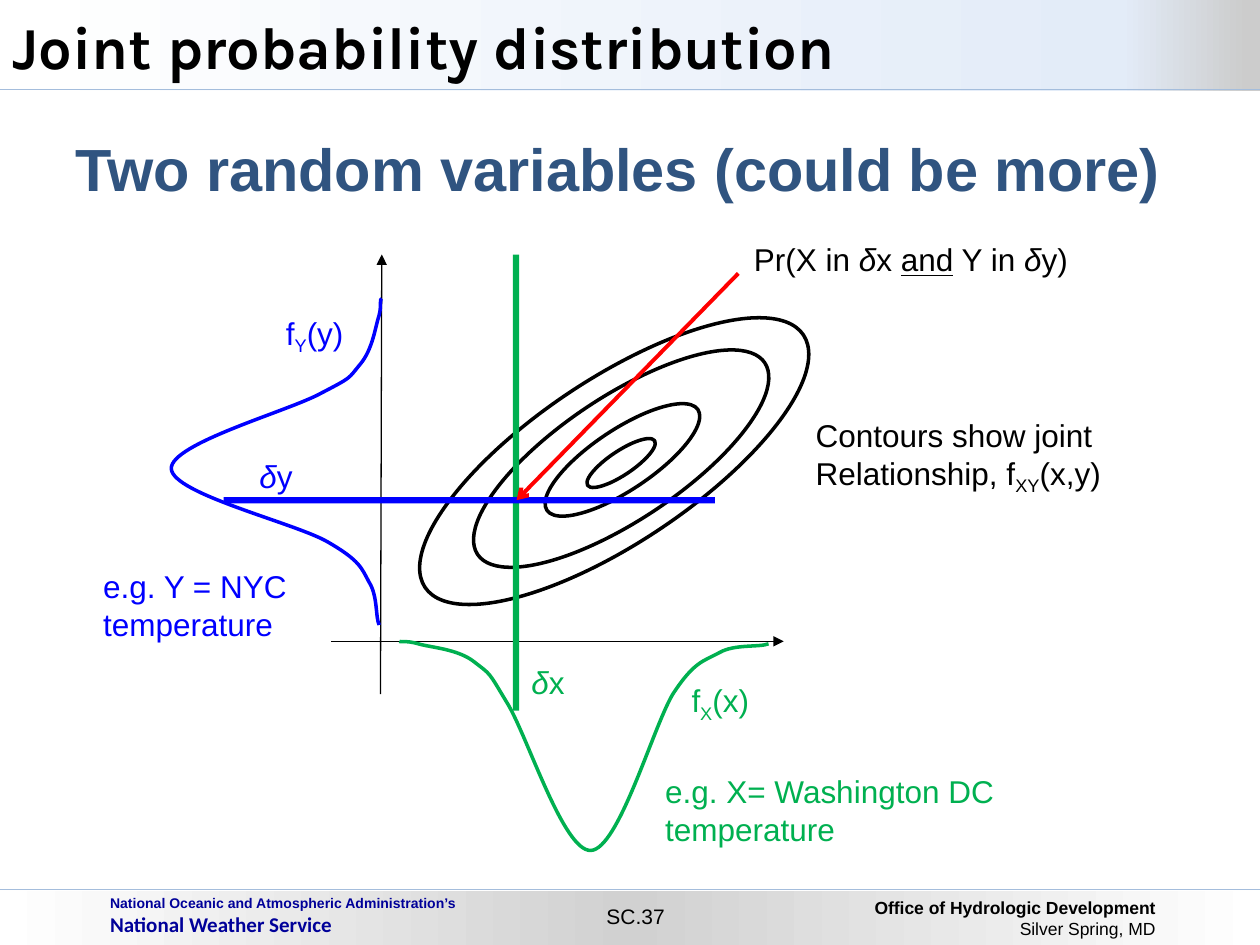
from lxml import etree
from pptx import Presentation
from pptx import util as u
from pptx.dml.color import RGBColor
from pptx.enum import shapes, text
from pptx.oxml.ns import qn

BLACK = RGBColor(0x00, 0x00, 0x00)
WHITE = RGBColor(0xFF, 0xFF, 0xFF)
RED = RGBColor(0xFF, 0x00, 0x00)
GREEN = RGBColor(0x00, 0xB0, 0x50)
BLUE = RGBColor(0x00, 0x00, 0xFF)
NAVY = RGBColor(0x00, 0x00, 0x99)
HEADING = RGBColor(0x30, 0x54, 0x80)
RULE = RGBColor(0xA4, 0xBD, 0xDC)
SILVER = RGBColor(0xD1, 0xD1, 0xD1)
ICE = RGBColor(0xE3, 0xEC, 0xF8)
GREY = RGBColor(0xCC, 0xCC, 0xCC)

# The slide is a grid of square cells; all positions are in cells
COLS, ROWS = 100, 75
CELL = u.Inches(0.1)
TILT = 326.3
RIGHT, CENTER = text.PP_ALIGN.RIGHT, text.PP_ALIGN.CENTER
RECT, OVAL = shapes.MSO_SHAPE.RECTANGLE, shapes.MSO_SHAPE.OVAL

# Run styles
ITALIC, UNDER, SUB = {"italic": True}, {"underline": True}, {"sub": True}


def cells(*values):
    return [u.Emu(round(v * CELL)) for v in values]


def add_shape(s, kind, box, fill=None, line=None, rotation=0):
    sp = s.shapes.add_shape(kind, *cells(*box))
    sp.shadow.inherit = False
    sp.rotation = rotation
    if fill is None:
        sp.fill.background()
    else:
        sp.fill.solid()
        sp.fill.fore_color.rgb = fill
    if line is None:
        sp.line.fill.background()
    else:
        sp.line.color.rgb = line
        sp.line.width = u.Pt(2)
    return sp


def add_band(s, box, stops):
    """Rectangle with a left-to-right gradient of (percent, colour) stops."""
    sp = add_shape(s, RECT, box, WHITE)
    sp.fill.gradient()
    sp.fill.gradient_angle = 0
    stop_list = sp._element.spPr.find(".//" + qn("a:gsLst"))
    for old in list(stop_list):
        stop_list.remove(old)
    for percent, color in stops:
        stop = etree.SubElement(stop_list, qn("a:gs"), pos=str(percent * 1000))
        etree.SubElement(stop, qn("a:srgbClr"), val=str(color))


def add_line(s, start, end, color=BLACK, width=0.75, head=None, tail=None):
    c = s.shapes.add_connector(shapes.MSO_CONNECTOR.STRAIGHT, *cells(*start, *end))
    c.line.color.rgb = color
    c.line.width = u.Pt(width)
    ln = c.line._get_or_add_ln()
    for tag, kind in (("a:headEnd", head), ("a:tailEnd", tail)):
        if kind:
            etree.SubElement(ln, qn(tag), type=kind)
    etree.SubElement(c._element.spPr, qn("a:effectLst"))


def add_curve(s, start, segments, color):
    """Open curve through cubic Bezier segments (x1, y1, x2, y2, x, y)."""
    builder = s.shapes.build_freeform(*cells(*start))
    builder.add_line_segments([cells(*seg[4:]) for seg in segments], close=False)
    sp = builder.convert_to_shape()
    sp.shadow.inherit = False
    sp.fill.background()
    sp.line.color.rgb = color
    sp.line.width = u.Pt(2)
    # Bend each straight segment with its control points
    straight = list(sp._element.spPr.iter(qn("a:lnTo")))
    for node, seg in zip(straight, segments):
        node.tag = qn("a:cubicBezTo")
        for old in list(node):
            node.remove(old)
        for x, y in zip(cells(*seg[::2]), cells(*seg[1::2])):
            etree.SubElement(node, qn("a:pt"), x=str(x - sp.left), y=str(y - sp.top))


def write(sp, paragraphs, size=18, color=BLACK, font="Arial", bold=False, align=None):
    """Fill with paragraphs, each a list of (text, style) runs."""
    tf = sp.text_frame
    for i, runs in enumerate(paragraphs):
        p = tf.paragraphs[0] if i == 0 else tf.add_paragraph()
        p.alignment = align or text.PP_ALIGN.LEFT
        for words, style in runs:
            r = p.add_run()
            r.text = words
            r.font.name = style.get("font", font)
            r.font.size = u.Pt(style.get("size", size))
            r.font.bold = style.get("bold", bold)
            r.font.italic = style.get("italic")
            r.font.underline = style.get("underline")
            r.font.color.rgb = color
            if style.get("sub"):
                r._r.get_or_add_rPr().set("baseline", "-25000")
    return tf


def add_text(s, box, paragraphs, wrap=False, grow=True, **look):
    sp = s.shapes.add_textbox(*cells(*box))
    tf = write(sp, paragraphs, **look)
    tf.word_wrap = wrap
    tf.auto_size = text.MSO_AUTO_SIZE.SHAPE_TO_FIT_TEXT if grow else text.MSO_AUTO_SIZE.NONE
    return tf


def add_frame(s):
    # Footer
    add_line(s, (COLS, 70.6), (0, 70.6), RULE)
    add_band(s, (0, 70.7, COLS, 4.4), [(0, WHITE), (50, SILVER), (100, WHITE)])
    tf = add_text(s, (68.9, 70.7, 23.3, 4.4),
                  [[("Office of Hydrologic Development", {"bold": True})],
                   [("Silver Spring, MD", {})]],
                  wrap=True, grow=False, size=10, align=RIGHT)
    tf.margin_left, tf.margin_right = u.Inches(0.01), u.Inches(0.05)
    add_text(s, (7.75, 70.5, 33.3, 4.3),
             [[("National Oceanic and Atmospheric Administration’s", {"size": 8})],
              [("National Weather Service", {"font": "Calibri"})]],
             wrap=True, size=12, color=NAVY, bold=True)
    add_text(s, (47, 71.2, 6.9, 3), [[("SC.37", {})]], size=12, align=CENTER)

    # Title bar
    add_band(s, (0, 0, COLS, 7.2), [(0, WHITE), (89, ICE), (99, GREY)])
    add_line(s, (COLS, 7.1), (0, 7.1), RULE)

    # Heading and title
    body = add_shape(s, RECT, (5, 10, 95, 56.7), WHITE)
    tf = write(body, [[("Two random variables (could be more)", {})]],
               size=34, color=HEADING, bold=True)
    tf.vertical_anchor = text.MSO_ANCHOR.TOP
    tf = add_text(s, (0, 0, COLS, 7.2), [[("Joint probability distribution", {})]],
                  wrap=True, grow=False, size=34, font="Karla", bold=True)
    tf.vertical_anchor = text.MSO_ANCHOR.MIDDLE


def add_labels(s):
    for box, name, var, color in (((53.9, 53.6, 9, 4), "X", "(x)", GREEN),
                                  ((21.7, 24.4, 7.1, 4), "Y", "(y)", BLUE)):
        add_text(s, box, [[("f", {}), (name, SUB), (var, {})]], wrap=True, color=color)
    for box, var, color in (((19.6, 35.8, 4.7, 4), "y", BLUE),
                            ((41.2, 52.1, 4.7, 4), "x", GREEN)):
        add_text(s, box, [[("δ", ITALIC), (var, {})]], color=color)
    add_text(s, (58.85, 18.6, 42, 4),
             [[("Pr(X in ", {}), ("δ", ITALIC), ("x ", {}), ("and", UNDER),
               (" Y in ", {}), ("δ", ITALIC), ("y)", {})]], wrap=True)
    add_text(s, (63.75, 32.5, 25.2, 7.1),
             [[("Contours show joint", {})],
              [("Relationship, f", {}), ("XY", SUB), ("(x,y)", {})]])
    for box, example, color in (((51.8, 60.8, 29.1, 7.1), "e.g. X= Washington DC", GREEN),
                                ((7.2, 44.5, 17.4, 7.1), "e.g. Y = NYC", BLUE)):
        add_text(s, box, [[(example, {})], [("temperature", {})]], color=color)


def add_diagram(s):
    # Axes
    add_line(s, (30.3, 20.2), (30.2, 55.1), head="triangle")
    add_line(s, (26.3, 50.9), (62.2, 50.9), tail="triangle")

    # Marginal densities of Y and X
    add_curve(s, (30.1, 49.6), [(29.8, 49, 30, 47.3, 29.3, 46.2),
                                (28.7, 45.1, 28.6, 44.5, 26, 43),
                                (23.4, 41.5, 13.7, 39.2, 13.6, 37.2),
                                (13.5, 35.2, 23, 32.6, 25.5, 31.2),
                                (28, 29.9, 27.6, 30.1, 28.6, 28.9),
                                (29.6, 27.7, 29.8, 25.9, 30.1, 25),
                                (30.3, 24.2, 30.1, 23.7, 30.3, 23.7)], BLUE)
    add_curve(s, (61, 51.1), [(60.3, 51.4, 58.3, 51.1, 57.1, 51.8),
                              (55.8, 52.5, 55.1, 52.5, 53.4, 55.1),
                              (51.8, 57.8, 49.1, 67.4, 46.9, 67.5),
                              (44.7, 67.6, 41.8, 58.2, 40.2, 55.7),
                              (38.7, 53.2, 39, 53.6, 37.6, 52.5),
                              (36.3, 51.5, 34.2, 51.4, 33.2, 51.1),
                              (32.2, 50.8, 31.7, 51, 31.7, 50.9)], GREEN)

    # Contours of the joint density; the outermost is unfilled
    for box, fill in (((35.6, 31.5, 27.4, 9.8), WHITE),
                      ((42.2, 34.1, 14.4, 4.8), WHITE),
                      ((46.1, 35.8, 6.4, 1.9), WHITE),
                      ((30.7, 30.1, 36.1, 13), None)):
        add_shape(s, OVAL, box, fill, BLACK, TILT)

    # Slices in x and y, and the pointer to their crossing
    add_shape(s, RECT, (40.7, 20.2, 0.5, 36.2), GREEN)
    add_shape(s, RECT, (37, 20.2, 0.5, 39), BLUE, rotation=270)
    add_line(s, (58.6, 21.7), (41, 39.7), RED, 2.25, tail="arrow")


def main():
    prs = Presentation()
    prs.slide_width, prs.slide_height = cells(COLS, ROWS)
    s = prs.slides.add_slide(prs.slide_layouts[6])
    add_frame(s)
    add_labels(s)
    add_diagram(s)
    prs.save("out.pptx")


if __name__ == "__main__":
    main()
